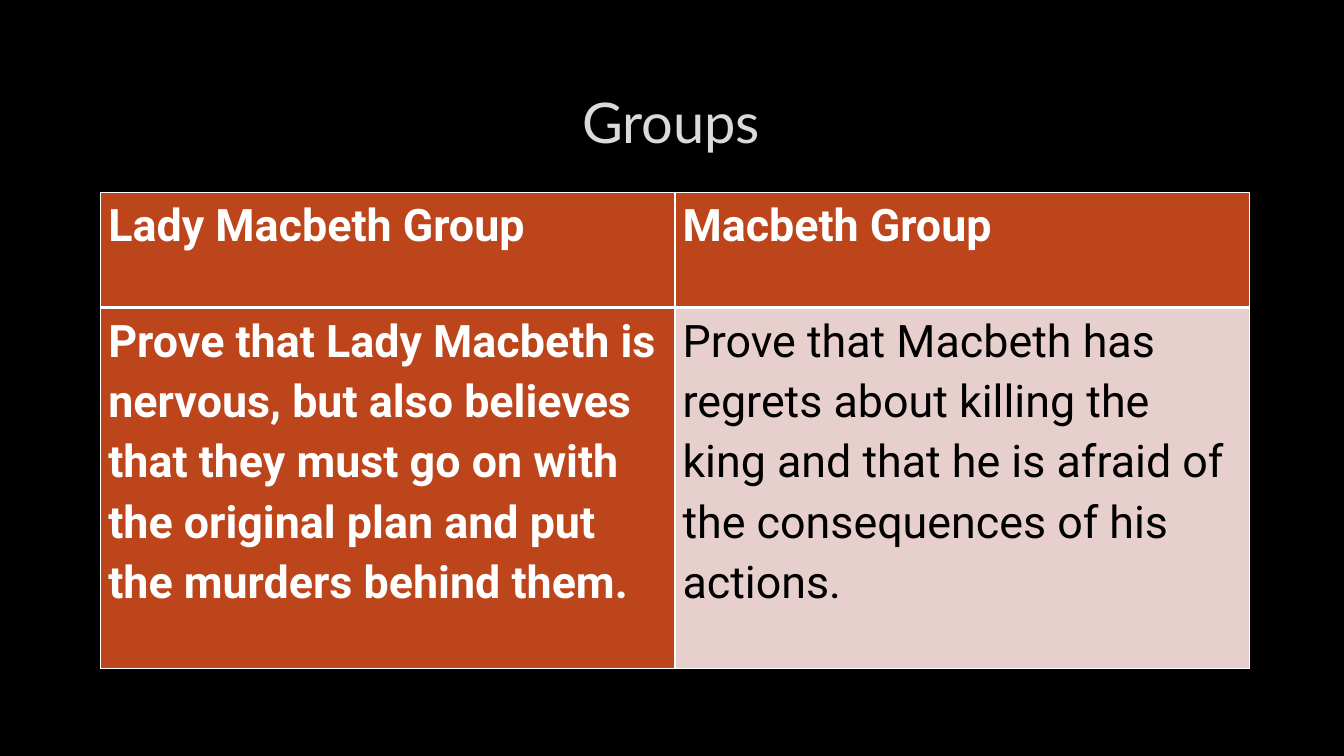
from dataclasses import dataclass

from lxml import etree
from pptx import Presentation
from pptx.dml.color import RGBColor
from pptx.enum import text
from pptx.oxml import ns
from pptx.util import Cm, Pt


@dataclass(frozen=True)
class Theme:
    background: str = "000000"
    title: str = "DADADA"
    title_outline: str = "404040"
    rust: str = "BC451B"
    blush: str = "E7CFCD"
    light: str = "FFFFFF"
    dark: str = "000000"
    title_font: str = "Lato"
    body_font: str = "Roboto"
    title_size: int = 40
    body_size: int = 32
    thin: float = 1
    thick: float = 3


@dataclass(frozen=True)
class Entry:
    words: str
    fill: str
    color: str
    bold: bool = True


THEME = Theme()
ROW_HEIGHTS = (Cm(2.9), Cm(9.09))
COLUMN_WIDTH = Cm(14.47)
GROUPS = (
    (Entry("Lady Macbeth Group", THEME.rust, THEME.light),
     Entry("Macbeth Group", THEME.rust, THEME.light)),
    (Entry("Prove that Lady Macbeth is nervous, but also believes that they must "
           "go on with the original plan and put the murders behind them.",
           THEME.rust, THEME.light),
     Entry("Prove that Macbeth has regrets about killing the king and that he is "
           "afraid of the consequences of his actions.",
           THEME.blush, THEME.dark, bold=False)),
)


def write(frame, words: str, *, font: str, size: float, color: str,
          bold: bool = False, align=text.PP_ALIGN.LEFT, spacing: float = 1.0):
    """Fill a text frame with one formatted paragraph and return its run."""
    paragraph = frame.paragraphs[0]
    paragraph.alignment = align
    paragraph.line_spacing = spacing
    run = paragraph.add_run()
    run.text = words
    run.font.name = font
    run.font.size = Pt(size)
    run.font.bold = bold
    run.font.color.rgb = RGBColor.from_string(color)
    return run


def make_line(tag: str, color: str, width: float, alpha: int = 100):
    """Build a solid line element for a cell border or a text outline."""
    line = etree.Element(ns.qn(tag), w=str(Pt(width)))
    fill = etree.SubElement(line, ns.qn("a:solidFill"))
    tint = etree.SubElement(fill, ns.qn("a:srgbClr"), val=color)
    if alpha < 100:
        etree.SubElement(tint, ns.qn("a:alpha"), val=str(alpha * 1000))
    etree.SubElement(line, ns.qn("a:prstDash"), val="solid")
    return line


def draw_entry(cell, entry: Entry, top: float, bottom: float) -> None:
    cell.margin_left = cell.margin_right = Cm(0.19)
    cell.margin_top = cell.margin_bottom = 0
    cell.fill.solid()
    cell.fill.fore_color.rgb = RGBColor.from_string(entry.fill)
    write(cell.text_frame, entry.words, font=THEME.body_font, size=THEME.body_size,
          color=entry.color, bold=entry.bold, spacing=1.15)
    # Borders come before the fill, in this order
    sides = {"a:lnL": THEME.thin, "a:lnR": THEME.thin, "a:lnT": top, "a:lnB": bottom}
    properties = cell._tc.get_or_add_tcPr()
    for place, (tag, width) in enumerate(sides.items()):
        properties.insert(place, make_line(tag, THEME.light, width))


def draw_title(slide, words: str) -> None:
    title = slide.shapes.title
    title.left, title.top, title.width, title.height = Cm(2.54), Cm(1.7), Cm(28.75), Cm(2.69)
    title.text_frame.vertical_anchor = text.MSO_ANCHOR.MIDDLE
    run = write(title.text_frame, words, font=THEME.title_font, size=THEME.title_size,
                color=THEME.title, align=text.PP_ALIGN.CENTER)
    outline = make_line("a:ln", THEME.title_outline, 0.75, alpha=10)
    run.font._element.insert(0, outline)


def draw_groups(slide) -> None:
    columns = len(GROUPS[0])
    groups = slide.shapes.add_table(len(GROUPS), columns, Cm(2.54), Cm(4.85),
                                    COLUMN_WIDTH * columns, sum(ROW_HEIGHTS)).table
    for column in groups.columns:
        column.width = COLUMN_WIDTH
    for row, entries in enumerate(GROUPS):
        groups.rows[row].height = ROW_HEIGHTS[row]
        top, bottom = (THEME.thick, THEME.thin) if row else (THEME.thin, THEME.thick)
        for column, entry in enumerate(entries):
            draw_entry(groups.cell(row, column), entry, top, bottom)


def main() -> None:
    deck = Presentation()
    deck.slide_width, deck.slide_height = Cm(33.87), Cm(19.05)
    # Title-only slide on black
    slide = deck.slides.add_slide(deck.slide_layouts[5])
    slide.background.fill.solid()
    slide.background.fill.fore_color.rgb = RGBColor.from_string(THEME.background)
    draw_title(slide, "Groups")
    draw_groups(slide)
    deck.save("out.pptx")


if __name__ == "__main__":
    main()
